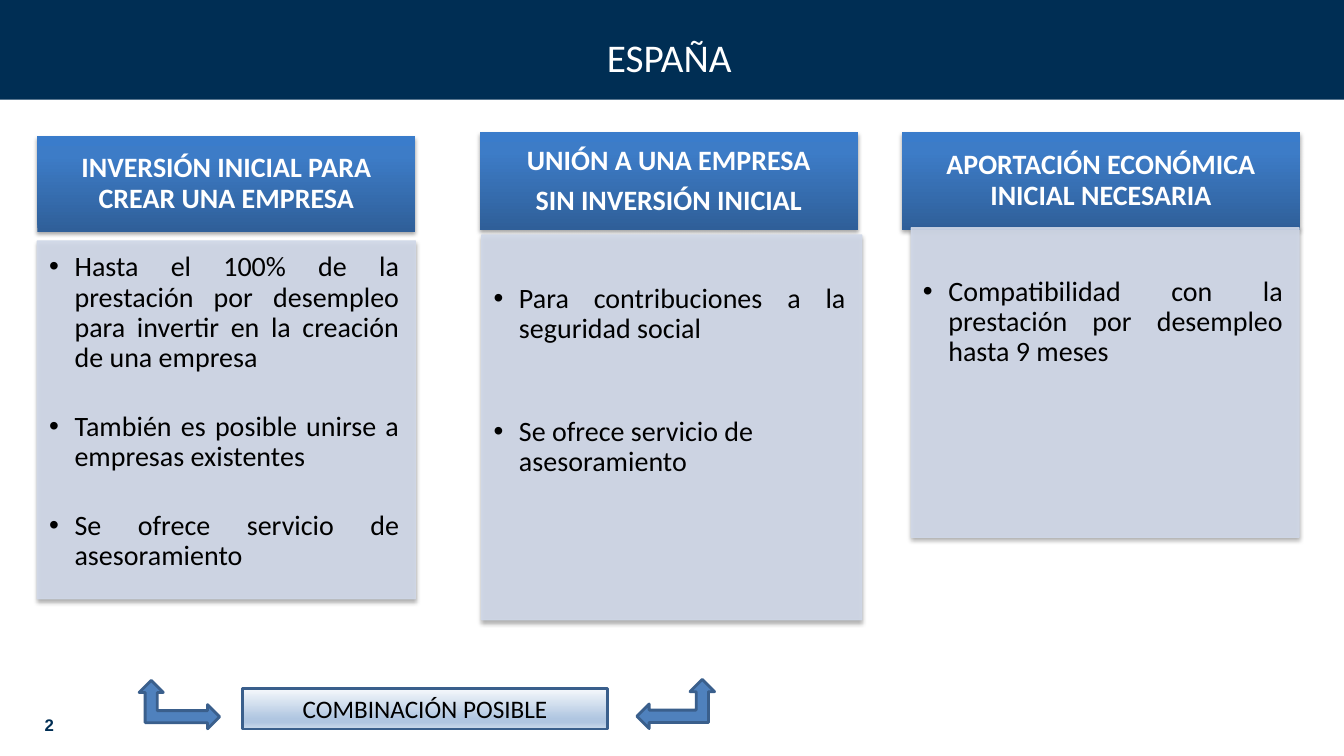
"""Builds a slide comparing three uses of the unemployment benefit in Spain."""
from pptx import Presentation
from pptx.dml.color import RGBColor
from pptx.enum.shapes import MSO_SHAPE
from pptx.enum.text import MSO_ANCHOR, PP_ALIGN
from pptx.oxml.ns import qn
from pptx.util import Cm, Pt
from lxml.etree import SubElement

COLORS = {
    "navy": "002E54", "white": "FFFFFF", "black": "000000",
    "panel": "D0D8E8", "arrow": "4F81BD", "outline": "3A5F8C",
}
HEADER_STOPS = [(0, "2F5F99"), (80, "3D7CC7"), (100, "3A7CCB")]
LABEL_STOPS = [(0, "F6F9FC"), (74, "B0C6E1"), (83, "B0C6E1"), (100, "CAD9EB")]
JUST, LEFT = PP_ALIGN.JUSTIFY, PP_ALIGN.LEFT

COLUMNS = [
    {
        "header": (0.94, 3.43, 9.53, 2.41),
        "title": ["INVERSIÓN INICIAL PARA CREAR UNA EMPRESA"],
        "body": (0.94, 6.07, 9.53, 9.02), "top": 0.3, "gap": 27.6,
        "bullets": [
            ("Hasta el 100% de la prestación por desempleo para invertir "
             "en la creación de una empresa", JUST),
            ("También es posible unirse a empresas existentes", JUST),
            ("Se ofrece servicio de asesoramiento", JUST),
        ],
    },
    {
        "header": (12.09, 3.33, 9.53, 2.46),
        "title": ["UNIÓN A UNA EMPRESA", "SIN INVERSIÓN INICIAL"],
        "body": (12.14, 5.92, 9.58, 9.7), "top": 1.24, "gap": 52,
        "bullets": [
            ("Para contribuciones a la seguridad social", JUST),
            ("Se ofrece servicio de asesoramiento", LEFT),
        ],
    },
    {
        "header": (22.73, 3.33, 10.03, 2.46),
        "title": ["APORTACIÓN ECONÓMICA INICIAL NECESARIA"],
        "body": (22.96, 5.74, 9.78, 7.8), "top": 1.24, "gap": 0,
        "bullets": [
            ("Compatibilidad con la prestación por desempleo hasta 9 meses", JUST),
        ],
    },
]


def rgb(name):
    """Return the named colour."""
    return RGBColor.from_string(COLORS[name])


def add_box(s, kind, box, fill=None, line=None, width=0.75):
    """Add a preset shape without shadow, given its box in centimetres."""
    sp = s.shapes.add_shape(kind, *(Cm(v) for v in box))
    sp.shadow.inherit = False
    if fill:
        sp.fill.solid()
        sp.fill.fore_color.rgb = rgb(fill)
    if line:
        sp.line.color.rgb = rgb(line)
        sp.line.width = Pt(width)
    else:
        sp.line.fill.background()
    return sp


def set_gradient(sp, stops, angle):
    """Fill a shape with a linear gradient, angle counter-clockwise."""
    sp.fill.gradient()
    sp.fill.gradient_angle = angle
    stop_list = sp.element.spPr.find(qn("a:gradFill")).find(qn("a:gsLst"))
    for gs in list(stop_list):
        stop_list.remove(gs)
    for pos, color in stops:
        gs = SubElement(stop_list, qn("a:gs"), pos=str(pos * 1000))
        SubElement(gs, qn("a:srgbClr"), val=color)


def add_shadow(sp):
    """Give a shape a soft shadow below it."""
    effects = sp.element.spPr.find(qn("a:effectLst"))
    shadow = SubElement(effects, qn("a:outerShdw"), blurRad=str(Pt(3.1)),
                        dist=str(Pt(1.8)), dir="5400000", rotWithShape="0")
    color = SubElement(shadow, qn("a:srgbClr"), val=COLORS["black"])
    SubElement(color, qn("a:alpha"), val="35000")


def set_insets(tf, left, top, right, bottom):
    """Set the text margins in centimetres."""
    tf.margin_left, tf.margin_top = Cm(left), Cm(top)
    tf.margin_right, tf.margin_bottom = Cm(right), Cm(bottom)


def add_bullet(p):
    """Turn a paragraph into a hanging bullet."""
    pPr = p._p.get_or_add_pPr()
    pPr.set("marL", str(Cm(0.64)))
    pPr.set("indent", str(-Cm(0.64)))
    SubElement(pPr, qn("a:buFont"), typeface="Arial")
    SubElement(pPr, qn("a:buChar"), char="•")


def write(tf, lines, size, color, bold=False, font="Calibri",
          align=PP_ALIGN.CENTER, anchor=MSO_ANCHOR.MIDDLE, spacing=1.0, gap=0):
    """Write one paragraph per line and format its runs."""
    tf.word_wrap = True
    tf.vertical_anchor = anchor
    for i, line in enumerate(lines):
        p = tf.paragraphs[0] if i == 0 else tf.add_paragraph()
        p.text = line
        p.alignment = align
        p.line_spacing = spacing
        p.space_before = Pt(gap if i else 0)
        for r in p.runs:
            r.font.size, r.font.name, r.font.bold = Pt(size), font, bold
            r.font.color.rgb = rgb(color)


def add_title(s, text):
    """Place the title on its dark band."""
    title = s.shapes.title
    band = add_box(s, MSO_SHAPE.RECTANGLE, (0, 0, 33.87, 2.51), "navy")
    title.element.addprevious(band.element)
    title.left, title.top, title.width, title.height = (
        Cm(v) for v in (2.26, 0.71, 29.21, 1.45))
    write(title.text_frame, [text], 28, "white")


def add_header(s, box, lines):
    """Add the blue heading of a column."""
    sp = add_box(s, MSO_SHAPE.RECTANGLE, box)
    set_gradient(sp, HEADER_STOPS, 90)
    add_shadow(sp)
    set_insets(sp.text_frame, 0.41, 0.23, 0.41, 0.23)
    write(sp.text_frame, lines, 20, "white", bold=True, spacing=0.9, gap=7)


def add_panel(s, box, bullets, top, gap):
    """Add the pale panel with the bullets of a column."""
    sp = add_box(s, MSO_SHAPE.RECTANGLE, box, "panel", "panel")
    for color in sp.element.spPr.iter(qn("a:srgbClr")):
        SubElement(color, qn("a:alpha"), val="90000")
    add_shadow(sp)
    tf = sp.text_frame
    set_insets(tf, 0.3, top, 0.41, 0.43)
    write(tf, [text for text, _ in bullets], 20, "black",
          anchor=MSO_ANCHOR.TOP, spacing=0.9, gap=gap)
    for p, (_, align) in zip(tf.paragraphs, bullets):
        p.alignment = align
        add_bullet(p)


def add_combination(s, text):
    """Add the label and the two arrows joining the first two columns."""
    label = add_box(s, MSO_SHAPE.RECTANGLE, (6.12, 17.35, 9.19, 1.02),
                    line="outline", width=2)
    set_gradient(label, LABEL_STOPS, 270)
    write(label.text_frame, [text], 18, "black")
    for box, rotation in (((16.05, 17.12, 1.96, 1.24), 0),
                          ((3.91, 16.74, 1.22, 2.03), 90)):
        arrow = add_box(s, MSO_SHAPE.LEFT_UP_ARROW, box, "arrow", "outline", 2)
        arrow.rotation = rotation


def main():
    """Build and save the slide."""
    prs = Presentation()
    prs.slide_width, prs.slide_height = Cm(33.87), Cm(19.05)
    s = prs.slides.add_slide(prs.slide_layouts[5])
    add_title(s, "ESPAÑA")
    number = add_box(s, MSO_SHAPE.RECTANGLE, (0.23, 17.75, 2.03, 1.02), "white")
    write(number.text_frame, ["2"], 12, "navy", bold=True, font="Arial")
    for col in COLUMNS:
        add_header(s, col["header"], col["title"])
        add_panel(s, col["body"], col["bullets"], col["top"], col["gap"])
    add_combination(s, "COMBINACIÓN POSIBLE")
    prs.save("out.pptx")


if __name__ == "__main__":
    main()
